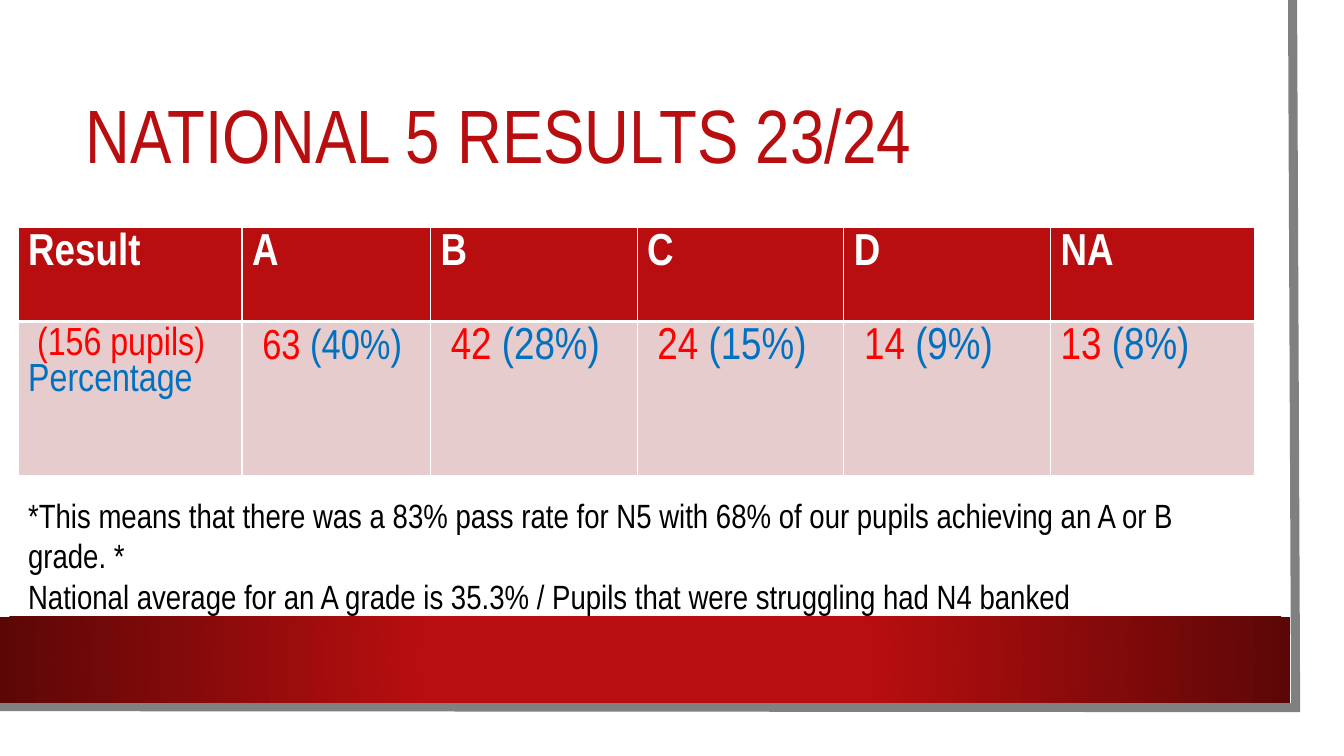
from lxml import etree
from pptx import Presentation
from pptx import util as u
from pptx.dml.color import RGBColor
from pptx.enum import shapes, text
from pptx.oxml import parse_xml
from pptx.oxml.ns import qn

PX = u.Inches(1) // 100
THEME = {
    "font": "Arial Narrow", "white": "FFFFFF", "black": "000000", "red": "B80E0F",
    "dark": "5C0707", "pink": "E6CCCC", "grey": "808080", "count": "FF0000", "share": "0070C0",
    "title": 54, "large": 32, "medium": 30, "small": 28, "note": 24,
}


def write_runs(paragraph, pieces, bold=False, spacing=1.0):
    paragraph.alignment = text.PP_ALIGN.LEFT
    paragraph.line_spacing = spacing
    for words, size, color in pieces:
        run = paragraph.add_run()
        run.text = words
        run.font.name = THEME["font"]
        run.font.size = u.Pt(THEME[size])
        run.font.bold = bold
        run.font.color.rgb = RGBColor.from_string(THEME[color])


def style_cell(cell, fill, top, bottom):
    cell.fill.solid()
    cell.fill.fore_color.rgb = RGBColor.from_string(THEME[fill])
    properties = cell._tc.get_or_add_tcPr()
    for index, (side, points) in enumerate([("L", 1), ("R", 1), ("T", top), ("B", bottom)]):
        border = etree.Element(qn(f"a:ln{side}"), w=str(u.Pt(points)))
        solid = etree.SubElement(border, qn("a:solidFill"))
        etree.SubElement(solid, qn("a:srgbClr"), val=THEME["white"])
        properties.insert(index, border)


presentation = Presentation()
presentation.slide_width = 1333 * PX
presentation.slide_height = 750 * PX
slide = presentation.slides.add_slide(presentation.slide_layouts[5])

page = slide.shapes.add_shape(shapes.MSO_SHAPE.RECTANGLE, 0, 0, 1310 * PX, 727 * PX)
page.fill.solid()
page.fill.fore_color.rgb = RGBColor.from_string(THEME["white"])

builder = slide.shapes.build_freeform(1282, 0, scale=PX)
builder.add_line_segments([(1285, 702), (-3, 701)], close=False)
frame = builder.convert_to_shape()
frame.fill.background()
frame.line.color.rgb = RGBColor.from_string(THEME["grey"])
frame.line.width = u.Pt(6.5)
etree.SubElement(frame._element.spPr.find(qn("a:ln")), qn("a:miter"), lim="800000")

band = slide.shapes.add_shape(shapes.MSO_SHAPE.RECTANGLE, 0, 612 * PX, 1280 * PX, 85 * PX)
gradient = parse_xml(
    '<a:gradFill xmlns:a="http://schemas.openxmlformats.org/drawingml/2006/main" rotWithShape="1">'
    f'<a:gsLst><a:gs pos="34000"><a:srgbClr val="{THEME["red"]}"/></a:gs>'
    f'<a:gs pos="100000"><a:srgbClr val="{THEME["dark"]}"/></a:gs></a:gsLst>'
    '<a:path path="circle"><a:fillToRect l="50000" t="50000" r="50000" b="50000"/></a:path>'
    '</a:gradFill>')
band._element.spPr.find(qn("a:prstGeom")).addnext(gradient)

for shape in (page, frame, band):
    shape.shadow.inherit = False
for shape in (page, band):
    shape.line.fill.background()

title = slide.shapes.title
title.left, title.top, title.width, title.height = [v * PX for v in (75, 75, 1137, 126)]
title.text_frame.vertical_anchor = text.MSO_ANCHOR.MIDDLE
write_runs(title.text_frame.paragraphs[0],
           [("NATIONAL 5 RESULTS 23/24", "title", "red")], spacing=0.9)
slide.shapes._spTree.append(title._element)

grades = [
    ("Result", 222, [[(" (156 pupils)", "small", "count")], [("Percentage", "small", "share")]]),
    ("A", 187, [[(" ", "large", "count"), ("63 ", "medium", "count"), ("(40%)", "medium", "share")]]),
    ("B", 205, [[(" 42 ", "large", "count"), ("(28%)", "large", "share")]]),
    ("C", 205, [[(" 24 ", "large", "count"), ("(15%)", "large", "share")]]),
    ("D", 205, [[(" 14 ", "large", "count"), ("(9%)", "large", "share")]]),
]
no_award = [("NA", 202, [[("13", "large", "count"), (" (8%)", "large", "share")]])]

for left, columns in [(18, grades), (1042, no_award)]:
    heights = (93, 153)
    width = sum(column[1] for column in columns)
    table = slide.shapes.add_table(
        2, len(columns), left * PX, 226 * PX, width * PX, sum(heights) * PX).table
    for row, height in zip(table.rows, heights):
        row.height = height * PX
    for index, (heading, column_width, lines) in enumerate(columns):
        table.columns[index].width = column_width * PX
        header, result = table.cell(0, index), table.cell(1, index)
        style_cell(header, "red", 1, 3)
        style_cell(result, "pink", 3, 1)
        write_runs(header.text_frame.paragraphs[0], [(heading, "large", "white")], bold=True)
        for number, pieces in enumerate(lines):
            result_text = result.text_frame
            paragraph = result_text.add_paragraph() if number else result_text.paragraphs[0]
            write_runs(paragraph, pieces)

notes = slide.shapes.add_textbox(18 * PX, 486 * PX, 1225 * PX, 131 * PX).text_frame
notes.word_wrap = True
write_runs(notes.paragraphs[0], [(
    "*This means that there was a 83% pass rate for N5 with 68% of our pupils "
    "achieving an A or B grade. *", "note", "black")])
write_runs(notes.add_paragraph(), [(
    "National average for an A grade is 35.3% / Pupils that were struggling had N4 banked",
    "note", "black")])

presentation.save("out.pptx")
